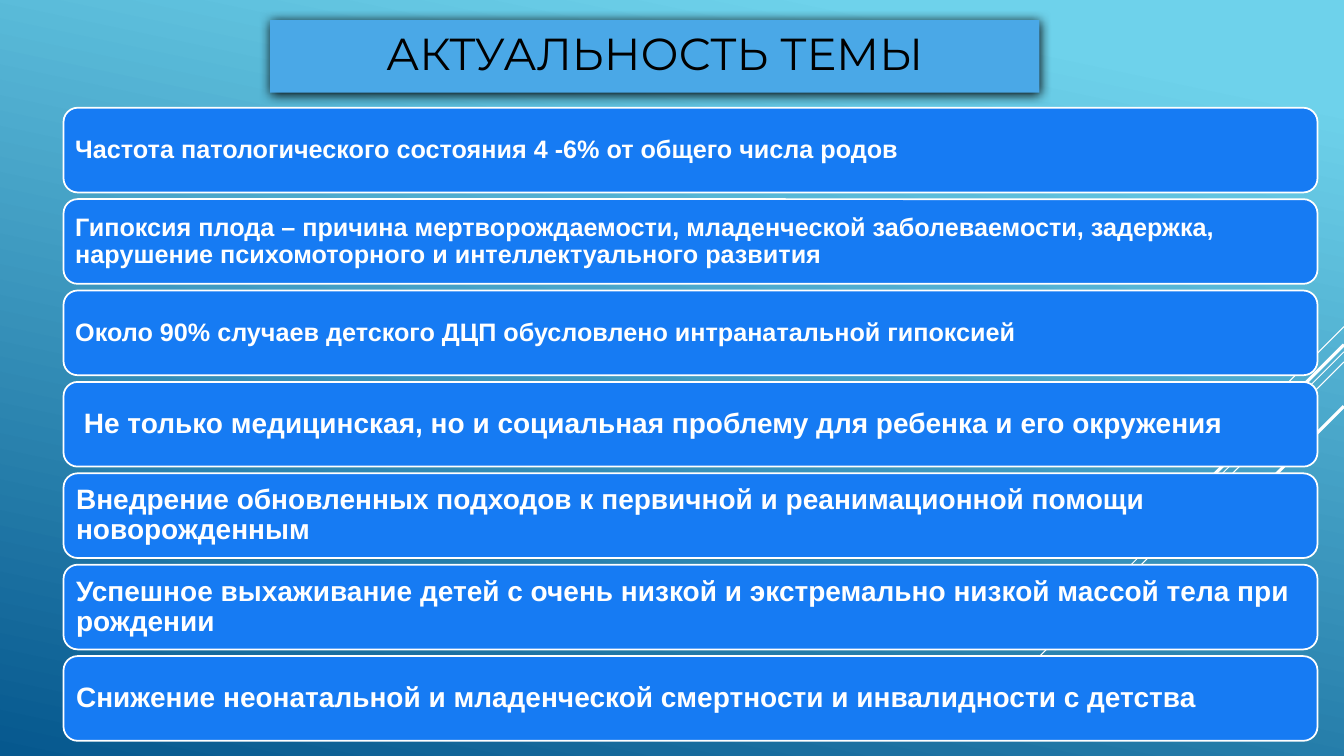
import pptx
import pptx.dml.color
import pptx.enum.shapes
import pptx.enum.text
import pptx.oxml
import pptx.oxml.ns
import pptx.util

Pt = pptx.util.Pt
WIDTH, HEIGHT = 960, 540
ROWS = [
    ("Частота патологического состояния 4 -6% от общего числа родов", 18),
    ("Гипоксия плода – причина мертворождаемости, младенческой заболеваемости, "
     "задержка, нарушение психомоторного и интеллектуального развития", 18),
    ("Около 90% случаев детского ДЦП обусловлено интранатальной гипоксией", 18),
    (" Не только медицинская, но и социальная проблему для ребенка и его окружения", 20),
    ("Внедрение обновленных подходов к первичной и реанимационной помощи "
     "новорожденным", 20),
    ("Успешное выхаживание детей с очень низкой и экстремально низкой массой тела "
     "при рождении", 20),
    ("Снижение неонатальной и младенческой смертности и инвалидности с детства", 20),
]
RAYS = [(233.3, 72, 0.75), (251.3, 234.7, 0.75), (258.5, 149, 0.75),
        (246.2, 137.5, 2.25), (290.2, 100, 2.25)]
ROW_TOP, ROW_STEP = 77, 65.28


def rgb(value):
    return pptx.dml.color.RGBColor.from_string(value)


class Deck:
    title_font, body_font = "Montserrat", "Arial"
    title_fill, row_fill = "4AA8E7", "167BF3"
    dark, light = "000000", "FFFFFF"
    bg_stops = [(0.1, "6ED2EB"), (1, "06588E")]
    bg_angle = 360 - 102

    def __init__(self):
        self.prs = pptx.Presentation()
        self.prs.slide_width, self.prs.slide_height = Pt(WIDTH), Pt(HEIGHT)
        self.s = self.prs.slides.add_slide(self.prs.slide_layouts[5])

    def background(self):
        fill = self.s.background.fill
        fill.gradient()
        fill.gradient_angle = self.bg_angle
        for stop, (position, color) in zip(fill.gradient_stops, self.bg_stops):
            stop.position = position
            stop.color.rgb = rgb(color)

    def effects(self, sp, inner=""):
        ns = pptx.oxml.ns.nsdecls("a")
        xml = f"<a:effectLst {ns}>{inner}</a:effectLst>"
        sp._element.spPr.append(pptx.oxml.parse_xml(xml))

    def add_text(self, sp, text, font, size, color, align, bold=False):
        tf = sp.text_frame
        tf.word_wrap = True
        tf.auto_size = pptx.enum.text.MSO_AUTO_SIZE.NONE
        tf.vertical_anchor = pptx.enum.text.MSO_ANCHOR.MIDDLE
        p = tf.paragraphs[0]
        p.alignment = align
        p.line_spacing = 0.9
        r = p.add_run()
        r.text = text
        r.font.name, r.font.size, r.font.bold = font, Pt(size), bold
        r.font.color.rgb = rgb(color)
        return tf

    def title(self, text, x, y, w, h):
        sp = self.s.shapes.title
        sp.left, sp.top, sp.width, sp.height = Pt(x), Pt(y), Pt(w), Pt(h)
        sp.fill.solid()
        sp.fill.fore_color.rgb = rgb(self.title_fill)
        self.effects(sp, f'<a:outerShdw blurRad="{Pt(8.5)}" dist="{Pt(1)}" dir="5400000" '
                         f'rotWithShape="0"><a:srgbClr val="{self.dark}"/></a:outerShdw>')
        self.add_text(sp, text, self.title_font, 32, self.dark,
                      pptx.enum.text.PP_ALIGN.CENTER)

    def ray(self, y, reach, weight):
        c = self.s.shapes.add_connector(
            pptx.enum.shapes.MSO_CONNECTOR.STRAIGHT,
            Pt(WIDTH), Pt(y), Pt(WIDTH - reach), Pt(y + reach))
        c.line.color.rgb = rgb(self.light)
        c.line.width = Pt(weight)
        self.effects(c)

    def row(self, text, size, x, y, w, h):
        sp = self.s.shapes.add_shape(
            pptx.enum.shapes.MSO_SHAPE.ROUNDED_RECTANGLE, Pt(x), Pt(y), Pt(w), Pt(h))
        sp.shadow.inherit = False
        sp.fill.solid()
        sp.fill.fore_color.rgb = rgb(self.row_fill)
        sp.line.color.rgb = rgb(self.light)
        sp.line.width = Pt(1.25)
        tf = self.add_text(sp, text, self.body_font, size, self.light,
                           pptx.enum.text.PP_ALIGN.LEFT, bold=True)
        inset = Pt(size * 0.3)
        tf.margin_left = tf.margin_right = tf.margin_top = tf.margin_bottom = inset


def main():
    deck = Deck()
    deck.background()
    for ray in RAYS:
        deck.ray(*ray)
    deck.title("АКТУАЛЬНОСТЬ ТЕМЫ", 193, 14.4, 549.4, 51.8)
    for i, (text, size) in enumerate(ROWS):
        deck.row(text, size, 45.4, ROW_TOP + i * ROW_STEP, 895.7, 60.5)
    deck.prs.save("out.pptx")


if __name__ == "__main__":
    main()
